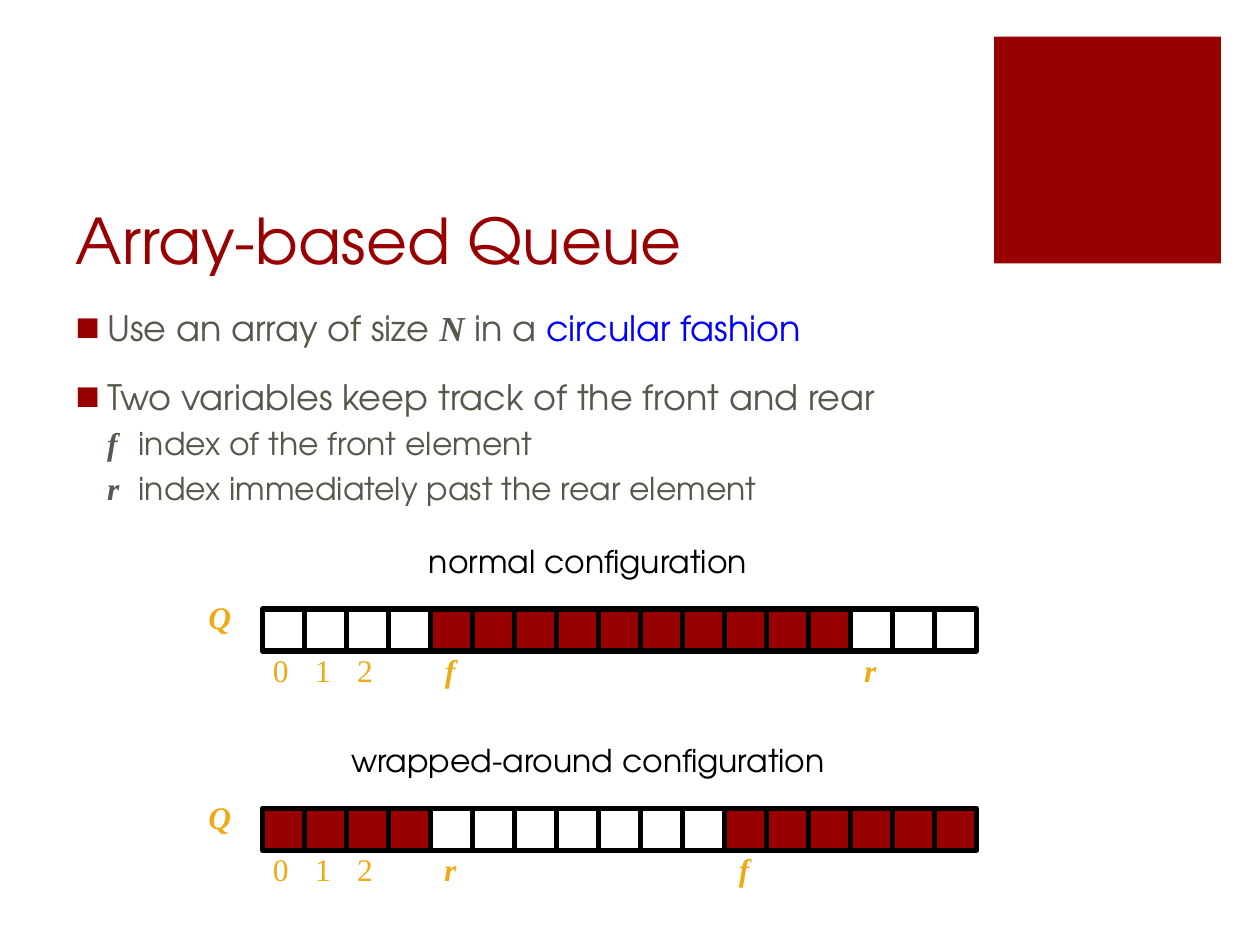
from lxml import etree
from pptx import Presentation
from pptx import util as u
from pptx.dml.color import RGBColor
from pptx.enum import shapes, text
from pptx.oxml import ns

HUES = {"red": "990000", "grey": "59564B", "blue": "0000FF",
        "gold": "EFAB16", "black": "000000", "white": "FFFFFF"}
SANS, SERIF = "TeX Gyre Adventor", "Times New Roman"
COLS, ROWS = 120, 90
CELL = 4

deck = Presentation()
deck.slide_width, deck.slide_height = u.Inches(10), u.Inches(7.5)


def grid(x, y, w, h):
    col, row = deck.slide_width / COLS, deck.slide_height / ROWS
    return [round(n) for n in (x * col, y * row, w * col, h * row)]


def place(item, box):
    item.left, item.top, item.width, item.height = grid(*box)


def hue(name):
    return RGBColor.from_string(HUES[name])


def write(para, words, size=18, face=SANS, tint="black", bold=False, slant=False):
    run = para.add_run()
    run.text = words
    font = run.font
    font.size, font.name = u.Pt(size), face
    font.bold, font.italic = bold, slant
    font.color.rgb = hue(tint)


def block(host, box, fill, line=None):
    item = host.add_shape(shapes.MSO_SHAPE.RECTANGLE, *grid(*box))
    item.shadow.inherit = False
    item.fill.solid()
    item.fill.fore_color.rgb = hue(fill)
    if line:
        item.line.color.rgb = hue(line)
        item.line.width = u.Pt(3)
    else:
        item.line.fill.background()


def label(host, box, words, pad=0, wrap=True, align="CENTER", **style):
    frame = host.add_textbox(*grid(*box)).text_frame
    frame.word_wrap = wrap
    frame.auto_size = text.MSO_AUTO_SIZE.SHAPE_TO_FIT_TEXT
    frame.margin_left = frame.margin_right = u.Inches(pad)
    frame.margin_top = frame.margin_bottom = u.Inches(pad / 2)
    para = frame.paragraphs[0]
    para.alignment = text.PP_ALIGN[align]
    write(para, words, **style)


def head(item, box):
    place(item, box)
    frame = item.text_frame
    frame.auto_size = text.MSO_AUTO_SIZE.NONE
    frame.vertical_anchor = text.MSO_ANCHOR.BOTTOM
    para = frame.paragraphs[0]
    para.alignment = text.PP_ALIGN.LEFT
    write(para, "Array-based Queue", size=36, tint="red")


def mark(para, level):
    para.level = level
    para.line_spacing = 0.9
    para.space_before = u.Pt(6 if level else 18)
    props = para._p.get_or_add_pPr()
    props.set("marL", str(u.Inches(0.25 * (level + 1))))
    props.set("indent", str(u.Inches(-0.25)))
    if level:
        etree.SubElement(props, ns.qn("a:buNone"))
        return
    tint = etree.SubElement(props, ns.qn("a:buClr"))
    etree.SubElement(tint, ns.qn("a:srgbClr"), val=HUES["red"])
    etree.SubElement(props, ns.qn("a:buFont"), typeface=SANS)
    etree.SubElement(props, ns.qn("a:buChar"), char="■")


def body(item, box):
    place(item, box)
    math = {"face": SERIF, "bold": True, "slant": True}
    lines = [
        (0, [("Use an array of size ", {}), ("N", math), (" in a ", {}),
             ("circular fashion", {"tint": "blue"})]),
        (0, [("Two variables keep track of the front and rear", {})]),
        (1, [("f", math), (" \tindex of the front element", {})]),
        (1, [("r", math), ("\tindex immediately past the rear element", {})]),
    ]
    frame = item.text_frame
    frame.auto_size = text.MSO_AUTO_SIZE.NONE
    for i, (level, parts) in enumerate(lines):
        para = frame.add_paragraph() if i else frame.paragraphs[0]
        mark(para, level)
        for words, style in parts:
            write(para, words, **{"size": 18 if level else 20, "tint": "grey", **style})


def queue(host, box, title, span, front, rear, cells):
    x, y, w, h = box
    group = host.add_group_shape().shapes
    gold = {"face": SERIF, "tint": "gold"}
    bold = {**gold, "bold": True, "slant": True}
    left, top = x + 6, y + 7
    label(group, (x, y + 6, 3.84, 4.8), "Q", **bold)
    for i in range(3):
        label(group, (left + 1 + i * CELL, y + 11, 2, 4.8), str(i),
              wrap=False, align="LEFT", **gold)
    for words, i in (("f", front), ("r", rear)):
        label(group, (left + i * CELL, y + 11, 3.75, 4.8), words, **bold)
    for i, used in enumerate(cells):
        block(group, (left + i * CELL, top, CELL, CELL),
              "red" if used else "white", "black")
    label(host, (x + w / 2 - span / 2, y, span, 6), title, pad=0.1, wrap=False)


def build():
    slide = deck.slides.add_slide(deck.slide_layouts[1])
    host = slide.shapes
    block(host, (94.68, 3.48, 21.6, 21.6), "red")
    head(host.title, (6, 12, 85.44, 15))
    body(slide.placeholders[1], (6, 29, 102, 32.9))
    queue(host, (19, 51, 74, 16), "normal configuration", 38.9, 4, 14,
          [4 <= i < 14 for i in range(17)])
    queue(host, (19, 70, 74, 16), "wrapped-around configuration", 55.8, 11, 4,
          [i < 4 or i >= 11 for i in range(17)])
    deck.save("out.pptx")


if __name__ == "__main__":
    build()
